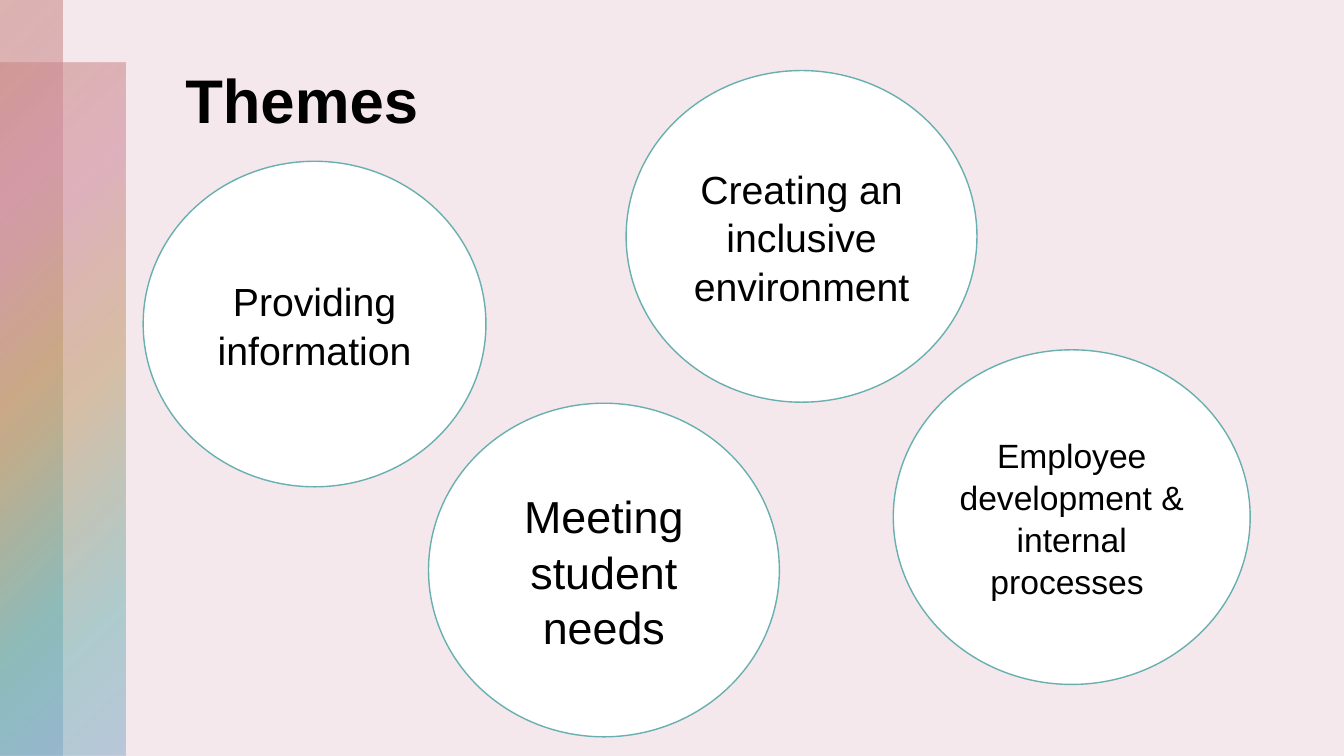
"""Build the Themes slide: four labelled circles beside a gradient side band."""
from pptx import Presentation
from pptx import util as u
from pptx.dml.color import RGBColor
from pptx.enum import shapes, text
from pptx.oxml import parse_xml
from pptx.oxml.ns import nsdecls, qn

BLUSH = RGBColor(0xF5, 0xE8, 0xEC)
WHITE = RGBColor(0xFF, 0xFF, 0xFF)
TEAL = RGBColor(0x68, 0xAF, 0xB0)
BLACK = RGBColor(0, 0, 0)
FONT = "Arial"

WIDTH, HEIGHT = 13.33, 7.5
TITLE = "Themes"
BAND_STOPS = [(0, "C58174", 50), (25, "CF8D9E", 60), (50, "C09C6A", 55),
              (81, "68AFB0", 50), (99, "7BA7C7", 50)]
BANDS = [(0.62, 1.24), (0, 0.62)]
THEMES = [
    ("Employee development & internal processes ", 24, (8.86, 3.47, 3.54, 3.32)),
    ("Creating an inclusive environment", 28, (6.21, 0.7, 3.48, 3.29)),
    ("Meeting student needs", 32, (4.25, 4, 3.48, 3.31)),
    ("Providing information", 28, (1.42, 1.6, 3.4, 3.23)),
]


def inches(bounds):
    return [u.Inches(length) for length in bounds]


def style(para, wording, size, bold=False):
    para.text = wording
    para.font.name = FONT
    para.font.size = u.Pt(size)
    para.font.bold = bold
    para.font.color.rgb = BLACK


def add_band(slide, top, width):
    band = slide.shapes.add_shape(shapes.MSO_SHAPE.RECTANGLE,
                                  *inches((0, top, width, HEIGHT - top)))
    band.shadow.inherit = False
    band.line.fill.background()
    band.fill.background()
    stops = "".join(
        f'<a:gs pos="{place * 1000}"><a:srgbClr val="{colour}">'
        f'<a:alpha val="{opacity * 1000}"/></a:srgbClr></a:gs>'
        for place, colour, opacity in BAND_STOPS)
    gradient = parse_xml(
        f'<a:gradFill {nsdecls("a")} rotWithShape="1"><a:gsLst>{stops}</a:gsLst>'
        '<a:path path="circle"><a:fillToRect r="100000" b="100000"/></a:path>'
        '</a:gradFill>')
    properties = band._element.spPr
    properties.replace(properties.find(qn("a:noFill")), gradient)


def add_theme(slide, wording, size, bounds):
    circle = slide.shapes.add_shape(shapes.MSO_SHAPE.OVAL, *inches(bounds))
    circle.shadow.inherit = False
    circle.fill.solid()
    circle.fill.fore_color.rgb = WHITE
    circle.line.color.rgb = TEAL
    circle.line.width = u.Pt(1)
    frame = circle.text_frame
    frame.word_wrap = True
    frame.vertical_anchor = text.MSO_ANCHOR.MIDDLE
    para = frame.paragraphs[0]
    style(para, wording, size)
    para.alignment = text.PP_ALIGN.CENTER
    para.line_spacing = 1.04


def add_title(slide):
    box = slide.shapes.add_textbox(*inches((1.74, 0.5, 10.37, 1.7)))
    box.text_frame.word_wrap = True
    box.text_frame.margin_top = u.Inches(0.11)
    style(box.text_frame.paragraphs[0], TITLE, 44, bold=True)


def main():
    deck = Presentation()
    deck.slide_width, deck.slide_height = inches((WIDTH, HEIGHT))
    slide = deck.slides.add_slide(deck.slide_layouts[6])
    slide.background.fill.solid()
    slide.background.fill.fore_color.rgb = BLUSH
    for top, width in BANDS:
        add_band(slide, top, width)
    for theme in THEMES:
        add_theme(slide, *theme)
    add_title(slide)
    deck.save("out.pptx")


if __name__ == "__main__":
    main()
